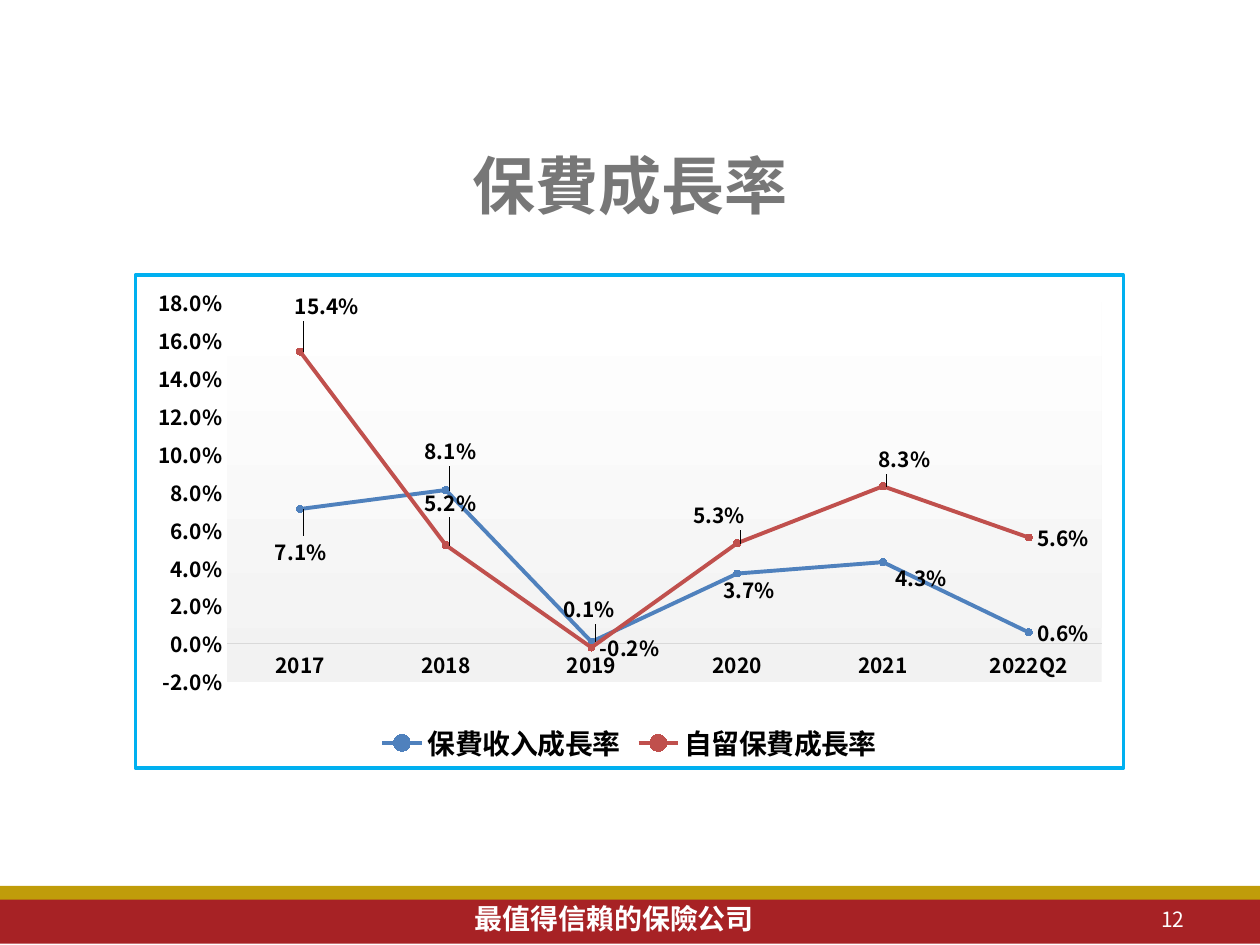
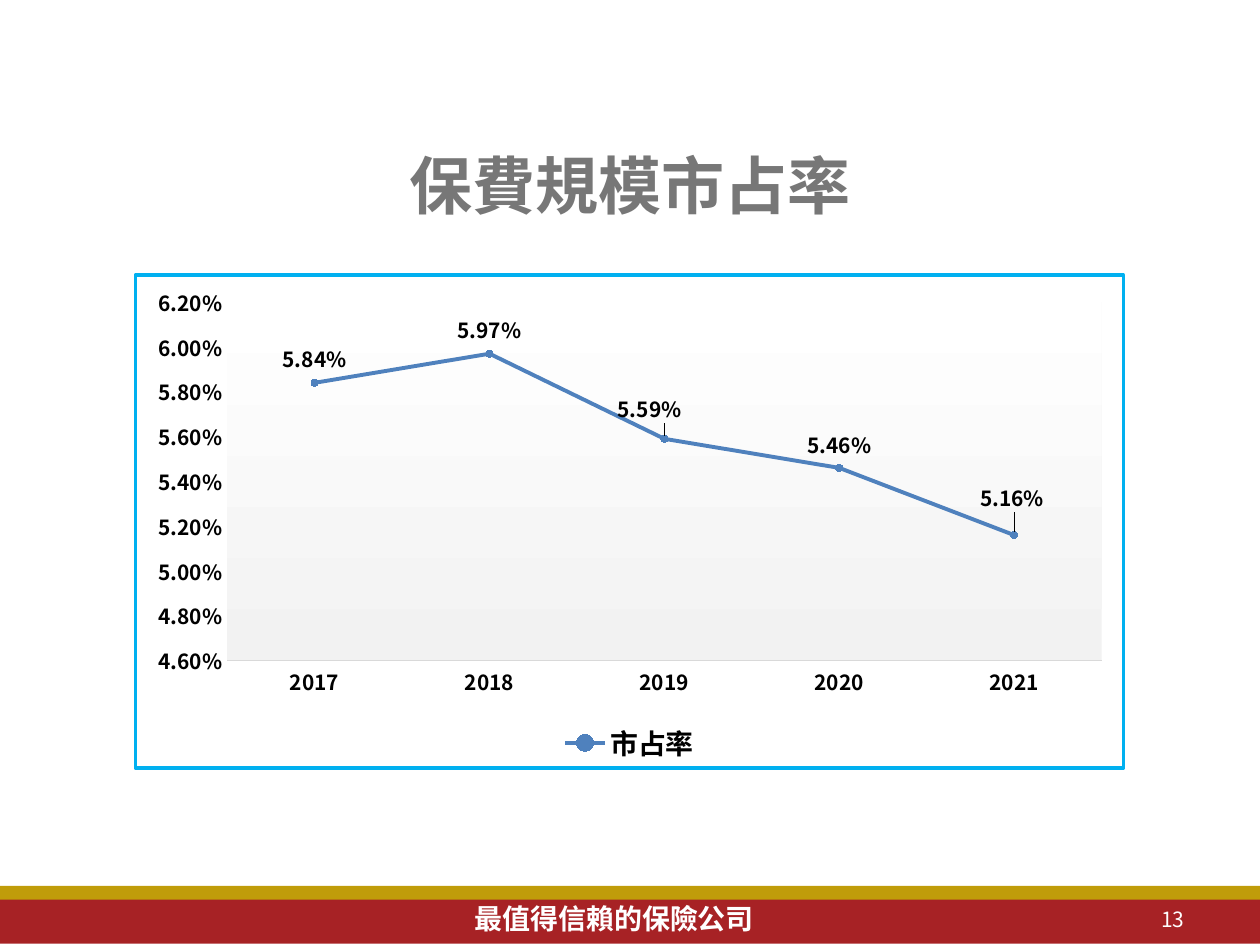
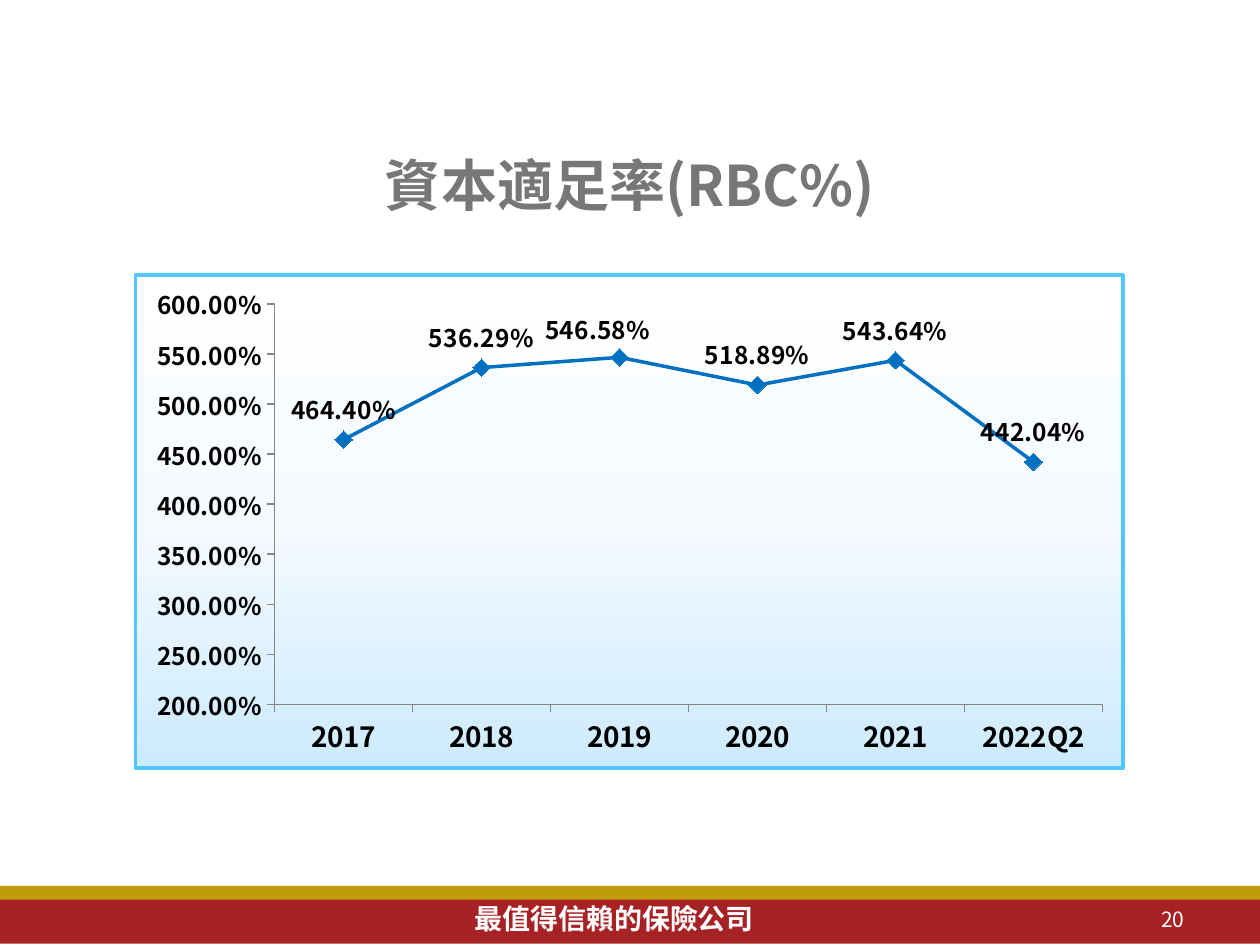
from lxml import etree
from pptx import Presentation
from pptx.chart.data import CategoryChartData
from pptx.dml.color import RGBColor
from pptx.enum.chart import (XL_CHART_TYPE, XL_LABEL_POSITION, XL_LEGEND_POSITION,
                             XL_MARKER_STYLE, XL_TICK_MARK)
from pptx.enum.shapes import MSO_SHAPE
from pptx.enum.text import MSO_ANCHOR, PP_ALIGN
from pptx.oxml import parse_xml
from pptx.oxml.ns import nsdecls, qn
from pptx.util import Inches, Pt

RIGHT, ABOVE = XL_LABEL_POSITION.RIGHT, XL_LABEL_POSITION.ABOVE
CIRCLE, DIAMOND = XL_MARKER_STYLE.CIRCLE, XL_MARKER_STYLE.DIAMOND
NO_TICK, TICK_OUT = XL_TICK_MARK.NONE, XL_TICK_MARK.OUTSIDE

FONT = "Noto Sans CJK SC"
GOLD = RGBColor(0xC0, 0x9C, 0x0A)
CRIMSON = RGBColor(0xA7, 0x22, 0x25)
WHITE = RGBColor(0xFF, 0xFF, 0xFF)
BLACK = RGBColor(0, 0, 0)
TITLE_GREY = RGBColor(0x77, 0x77, 0x77)
AXIS_GREY = RGBColor(0x86, 0x86, 0x86)
LIGHT_GREY = RGBColor(0xD9, 0xD9, 0xD9)
PALE_GREY = RGBColor(0xF2, 0xF2, 0xF2)
BLUE = RGBColor(0x4F, 0x81, 0xBD)
RED = RGBColor(0xC0, 0x50, 0x4D)
DEEP_BLUE = RGBColor(0x00, 0x70, 0xC0)
CYAN = RGBColor(0x00, 0xB0, 0xF0)
SKY = RGBColor(0x50, 0xC8, 0xFF)
ICE = RGBColor(0xCD, 0xEB, 0xFF)
FROST = RGBColor(0xF5, 0xFA, 0xFF)

YEARS = ["2017", "2018", "2019", "2020", "2021"]
PLAIN = dict(frame_fill=[(0, WHITE), (100, WHITE)], frame_line=(CYAN, 2),
             plot_fill=[(0, PALE_GREY), (100, WHITE)], tick=NO_TICK, cat_line=LIGHT_GREY,
             val_line=None, cat_size=12, val_size=12, legend=True, line_width=2.25,
             marker=(CIRCLE, 4))

# Each series: name, values, line colour, marker colour, label shifts as chart fractions.
SLIDES = [
    dict(PLAIN, title="保費成長率", title_size=36, page="12", cats=YEARS + ["2022Q2"],
         scale=(-0.02, 0.18, 0.02), fmt="0.0%", label_pos=RIGHT,
         plot=(0.093, 0.055, 0.885, 0.77),
         series=[
             ("保費收入成長率", [0.071, 0.081, 0.001, 0.037, 0.043, 0.006], BLUE, BLUE,
              {0: (-0.034, 0.085), 1: (-0.03, -0.08), 2: (-0.037, -0.068),
               3: (-0.023, 0.032), 4: (0.004, 0.03)}),
             ("自留保費成長率", [0.154, 0.052, -0.002, 0.053, 0.083, 0.056], RED, RED,
              {0: (-0.014, -0.093), 1: (-0.03, -0.087), 3: (-0.053, -0.058),
               4: (-0.013, -0.056)})]),
    dict(PLAIN, title="保費規模市占率", title_size=36, page="13", cats=YEARS,
         scale=(0.046, 0.062, 0.002), fmt="0.00%", label_pos=ABOVE,
         plot=(0.093, 0.055, 0.885, 0.727),
         series=[("市占率", [0.0584, 0.0597, 0.0559, 0.0546, 0.0516], BLUE, DEEP_BLUE,
                  {2: (-0.015, -0.014), 4: (-0.002, -0.028)})]),
    dict(title="資本適足率(RBC%)", title_size=32, page="20", cats=YEARS + ["2022Q2"],
         scale=(2, 6, 0.5), fmt="0.00%", label_pos=ABOVE,
         plot=(0.141, 0.058, 0.838, 0.813),
         frame_fill=[(0, ICE), (50, FROST), (100, WHITE)], frame_line=(SKY, 2.25),
         plot_fill=None, tick=TICK_OUT, cat_line=AXIS_GREY, val_line=AXIS_GREY,
         cat_size=16, val_size=14, legend=False, line_width=2, marker=(DIAMOND, 10),
         series=[("Series 1", [4.644, 5.3629, 5.4658, 5.1889, 5.4364, 4.4204],
                  DEEP_BLUE, CYAN, {2: (-0.022, 0.004)})]),
]


def add_text(s, text, box, size, color, bold, align, anchor=MSO_ANCHOR.MIDDLE):
    tf = s.shapes.add_textbox(*map(Inches, box)).text_frame
    tf.word_wrap = True
    tf.vertical_anchor = anchor
    p = tf.paragraphs[0]
    p.alignment = align
    r = p.add_run()
    r.text = text
    r.font.name, r.font.size, r.font.bold = FONT, Pt(size), bold
    r.font.color.rgb = color


def chart_xml(tag, stops=(), line=None, **layout):
    """Make a c:spPr (bottom-to-top gradient and border) or a manual c:layout."""
    el = parse_xml(f"<c:{tag} {nsdecls('c', 'a')}/>")
    if layout:
        manual = etree.SubElement(el, qn("c:manualLayout"))
        for name, val in layout.items():
            etree.SubElement(manual, qn(f"c:{name}")).set("val", str(val))
        return el
    grad = etree.SubElement(el, qn("a:gradFill"))
    stop_list = etree.SubElement(grad, qn("a:gsLst"))
    for pos, color in stops:
        gs = etree.SubElement(stop_list, qn("a:gs"), pos=str(pos * 1000))
        etree.SubElement(gs, qn("a:srgbClr"), val=str(color))
    etree.SubElement(grad, qn("a:lin"), ang="16200000", scaled="0")
    ln = etree.SubElement(el, qn("a:ln"))
    if line:
        ln.set("w", str(Pt(line[1])))
        fill = etree.SubElement(ln, qn("a:solidFill"))
        etree.SubElement(fill, qn("a:srgbClr"), val=str(line[0]))
    else:
        etree.SubElement(ln, qn("a:noFill"))
    return el


prs = Presentation()
prs.slide_width, prs.slide_height = Inches(10), Inches(7.5)

for d in SLIDES:
    s = prs.slides.add_slide(prs.slide_layouts[6])
    for top, height, color in [(7.03, 0.12, GOLD), (7.14, 0.35, CRIMSON)]:
        band = s.shapes.add_shape(MSO_SHAPE.RECTANGLE, 0, Inches(top),
                                  prs.slide_width, Inches(height))
        band.shadow.inherit = False
        band.fill.solid()
        band.fill.fore_color.rgb = color
        band.line.fill.background()
    add_text(s, "最值得信賴的保險公司", (3.67, 7.11, 2.65, 0.37), 16, WHITE, True,
             PP_ALIGN.JUSTIFY, MSO_ANCHOR.TOP)
    add_text(s, d["title"], (0.5, 0.99, 9, 0.94), d["title_size"], TITLE_GREY, True,
             PP_ALIGN.CENTER)
    add_text(s, d["page"], (7.17, 7.14, 2.33, 0.31), 12, WHITE, False, PP_ALIGN.RIGHT)

    data = CategoryChartData(number_format=d["fmt"])
    data.categories = d["cats"]
    for name, values, *_ in d["series"]:
        data.add_series(name, values)
    chart = s.shapes.add_chart(XL_CHART_TYPE.LINE_MARKERS, Inches(1.06), Inches(2.17),
                               Inches(7.87), Inches(3.94), data).chart
    chart.has_title = False
    chart.has_legend = d["legend"]
    fonts = [(chart.font, d["val_size"])]
    if d["legend"]:
        chart.legend.position = XL_LEGEND_POSITION.BOTTOM
        chart.legend.include_in_layout = False
        fonts.append((chart.legend.font, 16))

    cat, val = chart.category_axis, chart.value_axis
    val.minimum_scale, val.maximum_scale, val.major_unit = d["scale"]
    val.tick_labels.number_format = d["fmt"]
    val.tick_labels.number_format_is_linked = False
    for axis, color, size in [(cat, d["cat_line"], d["cat_size"]),
                              (val, d["val_line"], d["val_size"])]:
        axis.has_major_gridlines = False
        axis.major_tick_mark, axis.minor_tick_mark = d["tick"], NO_TICK
        if color is None:
            axis.format.line.fill.background()
        else:
            axis.format.line.color.rgb = color
            axis.format.line.width = Pt(0.75)
        fonts.append((axis.tick_labels.font, size))

    plot = chart.plots[0]
    plot.vary_by_categories = False
    for ser, (_, _, color, marker_color, shifts) in zip(plot.series, d["series"]):
        ser.smooth = False
        ser.format.line.color.rgb = color
        ser.format.line.width = Pt(d["line_width"])
        ser.marker.style, ser.marker.size = d["marker"]
        ser.marker.format.fill.solid()
        ser.marker.format.fill.fore_color.rgb = marker_color
        ser.marker.format.line.color.rgb = color
        labels = ser.data_labels
        labels.show_value = True
        labels.position = d["label_pos"]
        labels.number_format = d["fmt"]
        labels.number_format_is_linked = False
        fonts.append((labels.font, d["val_size"]))
        for i in shifts:
            label = ser.points[i].data_label
            label.position = d["label_pos"]
            fonts.append((label.font, d["val_size"]))
        for idx in ser._element.findall(f".//{qn('c:dLbl')}/{qn('c:idx')}"):
            x, y = shifts[int(idx.get("val"))]
            idx.addnext(chart_xml("layout", x=x, y=y))

    for font, size in fonts:
        font.name, font.size, font.bold = FONT, Pt(size), True
        font.color.rgb = BLACK

    space = chart._chartSpace
    space.find(qn("c:chart")).addnext(chart_xml("spPr", d["frame_fill"], d["frame_line"]))
    area = space.find(f".//{qn('c:plotArea')}")
    for old in area.findall(qn("c:layout")):
        area.remove(old)
    x, y, w, h = d["plot"]
    area.insert(0, chart_xml("layout", layoutTarget="inner", xMode="edge", yMode="edge",
                             x=x, y=y, w=w, h=h))
    if d["plot_fill"]:
        area.append(chart_xml("spPr", d["plot_fill"]))

    # East Asian text takes the same font as Latin text.
    for root in (s._element, space):
        for latin in list(root.iter(qn("a:latin"))):
            ea = etree.Element(qn("a:ea"), typeface=FONT)
            latin.addnext(ea)

prs.save("out.pptx")
